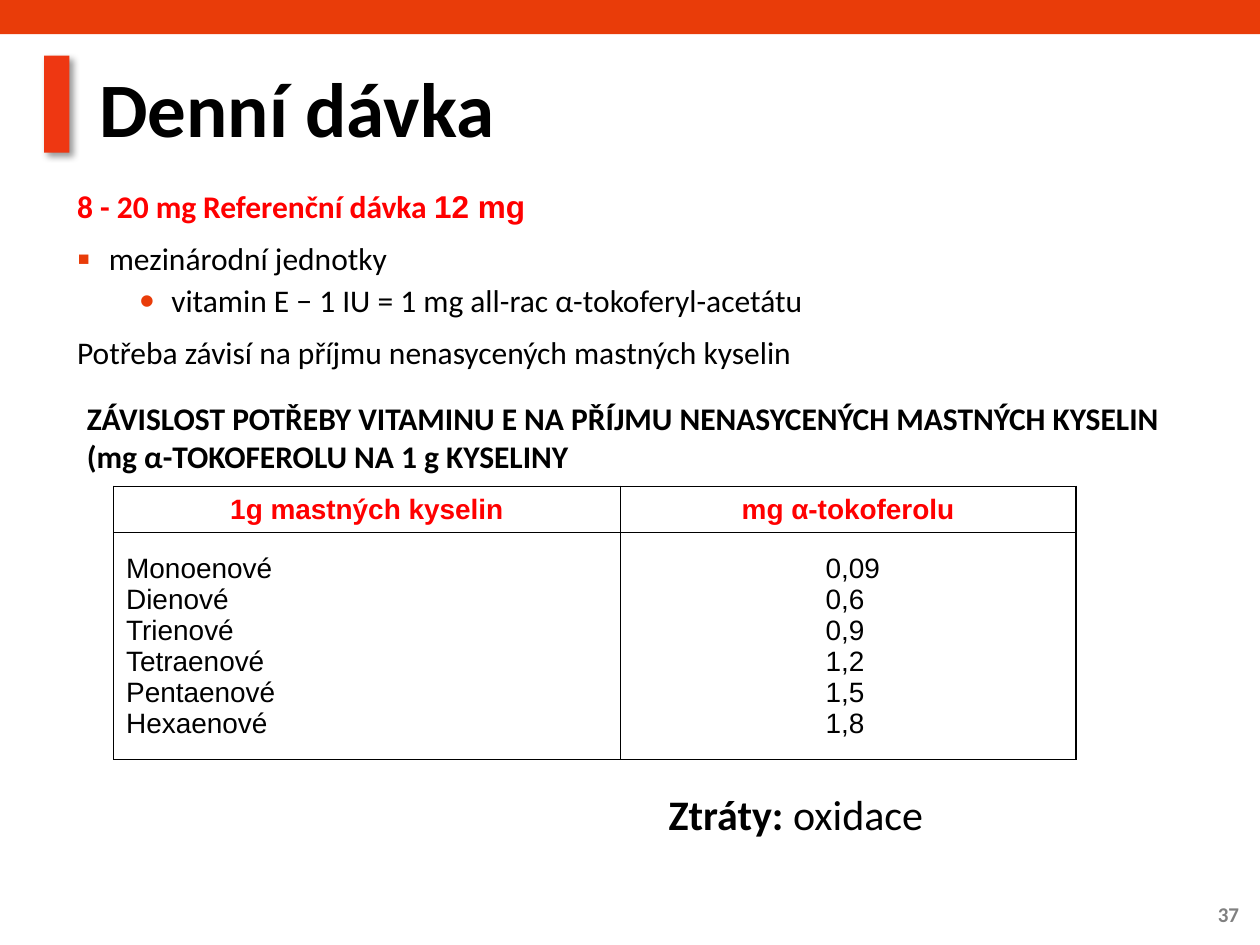
import pptx
import pptx.dml.color
import pptx.enum.shapes
import pptx.enum.text
import pptx.oxml.ns
import pptx.util
from lxml import etree

Cm = pptx.util.Cm
Pt = pptx.util.Pt
ALIGN = pptx.enum.text.PP_ALIGN
ANCHOR = pptx.enum.text.MSO_ANCHOR
AUTO_SIZE = pptx.enum.text.MSO_AUTO_SIZE

ACCENT, BAR, RED, BLACK, GREY = "E93C09", "EE3712", "FF0000", "000000", "808080"

TITLE = "Denní dávka"
SQUARE = {"char": "▪", "size": 120000}
DOT = {"char": "•", "size": 134000}
BODY_FORMAT = {"name": "Calibri", "size": Pt(18), "bold": False, "color": BLACK}
DOSE_FORMAT = {**BODY_FORMAT, "bold": True, "color": RED}
BODY = [
    {"runs": [("8 - 20 mg\tReferenční dávka ", DOSE_FORMAT),
              ("12 mg", {**DOSE_FORMAT, "name": "Arial"})],
     "before": 0, "tab": 3.26},
    {"runs": [("mezinárodní jednotky", BODY_FORMAT)],
     "before": 10, "left": 0.64, "bullet": SQUARE},
    {"runs": [("vitamin E − 1 IU = 1 mg all-rac α-tokoferyl-acetátu", BODY_FORMAT)],
     "before": 5, "left": 1.9, "bullet": DOT, "level": 1},
    {"runs": [("Potřeba závisí na příjmu nenasycených mastných kyselin", BODY_FORMAT)],
     "before": 10},
]
TABLE_HEADING = ("ZÁVISLOST POTŘEBY VITAMINU E NA PŘÍJMU NENASYCENÝCH MASTNÝCH KYSELIN "
                 "(mg α-TOKOFEROLU NA 1 g KYSELINY")
HEADERS = ["1g mastných kyselin", "mg α-tokoferolu"]
DOSES = [
    ("Monoenové", "0,09"),
    ("Dienové", "0,6"),
    ("Trienové", "0,9"),
    ("Tetraenové", "1,2"),
    ("Pentaenové", "1,5"),
    ("Hexaenové", "1,8"),
]
COLUMN_WIDTHS = [10.21, 9.19]
COLUMN_INDENTS = [0, 3.89]
ROW_HEIGHTS = [0.94, 4.57]
LOSSES = [("Ztráty: ", True), ("oxidace", False)]
SLIDE_NUMBER = "37"


def rgb(value):
    return pptx.dml.color.RGBColor.from_string(value)


def child(parent, tag, **attributes):
    return etree.SubElement(parent, pptx.oxml.ns.qn(tag), attributes)


def add_run(paragraph, text, values):
    run = paragraph.add_run()
    run.text = text
    for name, value in values.items():
        if name == "color":
            run.font.color.rgb = rgb(value)
        else:
            setattr(run.font, name, value)


def place(shape, left, top, width, height):
    box = {"left": left, "top": top, "width": width, "height": height}
    for name, value in box.items():
        setattr(shape, name, Cm(value))


def add_bar(slide, box, color):
    shape = slide.shapes.add_shape(
        pptx.enum.shapes.MSO_SHAPE.RECTANGLE, *[Cm(value) for value in box])
    shape.fill.solid()
    shape.fill.fore_color.rgb = rgb(color)
    shape.line.fill.background()
    shape.shadow.inherit = False
    return shape


def add_shadow(shape):
    effects = shape._element.spPr.find(pptx.oxml.ns.qn("a:effectLst"))
    shadow = child(effects, "a:outerShdw", blurRad=str(Pt(4)), dist=str(Pt(3)),
                   dir="2700000", algn="tl", rotWithShape="0")
    child(child(shadow, "a:srgbClr", val=BLACK), "a:alpha", val="40000")


def add_text(slide, box, runs, align=ALIGN.LEFT, anchor=ANCHOR.TOP,
             wrap=True, auto_size=AUTO_SIZE.SHAPE_TO_FIT_TEXT):
    frame = slide.shapes.add_textbox(*[Cm(value) for value in box]).text_frame
    settings = {"word_wrap": wrap, "auto_size": auto_size, "vertical_anchor": anchor}
    for name, value in settings.items():
        setattr(frame, name, value)
    paragraph = frame.paragraphs[0]
    paragraph.alignment = align
    for text, values in runs:
        add_run(paragraph, text, values)


def fill_title(title):
    place(title, 1.75, 1.02, 22.99, 2.49)
    title.text_frame.vertical_anchor = ANCHOR.MIDDLE
    title.text_frame.auto_size = AUTO_SIZE.NONE
    paragraph = title.text_frame.paragraphs[0]
    paragraph.alignment = ALIGN.LEFT
    paragraph.line_spacing = 0.9
    add_run(paragraph, TITLE,
            {"name": "Calibri", "size": Pt(44), "bold": True, "color": BLACK})


def fill_body(body):
    place(body, 1.3, 3.73, 22.86, 2.29)
    frame = body.text_frame
    frame.auto_size = AUTO_SIZE.NONE
    for index, item in enumerate(BODY):
        paragraph = frame.add_paragraph() if index else frame.paragraphs[0]
        paragraph.level = item.get("level", 0)
        properties = paragraph._p.get_or_add_pPr()
        bullet = item.get("bullet")
        properties.set("marL", str(Cm(item.get("left", 0))))
        properties.set("indent", str(-Cm(0.64) if bullet else 0))
        if bullet:
            child(child(properties, "a:buClr"), "a:srgbClr", val=ACCENT)
            child(properties, "a:buSzPct", val=str(bullet["size"]))
            child(properties, "a:buFont", typeface="Arial")
            child(properties, "a:buChar", char=bullet["char"])
        else:
            child(properties, "a:buNone")
        if "tab" in item:
            child(child(properties, "a:tabLst"), "a:tab",
                  pos=str(Cm(item["tab"])), algn="l")
        paragraph.line_spacing = 0.9
        paragraph.space_before = Pt(item["before"])
        for text, values in item["runs"]:
            add_run(paragraph, text, values)


def fill_cell(cell, lines, align, indent, values):
    cell.vertical_anchor = ANCHOR.MIDDLE
    cell.fill.background()
    properties = cell._tc.get_or_add_tcPr()
    for index, side in enumerate(["a:lnL", "a:lnR", "a:lnT", "a:lnB"]):
        border = child(properties, side, w=str(Pt(0.75)))
        child(child(border, "a:solidFill"), "a:srgbClr", val=BLACK)
        properties.insert(index, border)
    for index, line in enumerate(lines):
        frame = cell.text_frame
        paragraph = frame.add_paragraph() if index else frame.paragraphs[0]
        paragraph.alignment = align
        paragraph._p.get_or_add_pPr().set("marL", str(Cm(indent)))
        add_run(paragraph, line, {"name": "Arial", "size": Pt(16), **values})


def add_dose_table(slide):
    table = slide.shapes.add_table(
        2, 2, Cm(2.29), Cm(9.8), Cm(sum(COLUMN_WIDTHS)), Cm(sum(ROW_HEIGHTS))).table
    table.first_row = False
    table.horz_banding = False
    for row, height in zip(table.rows, ROW_HEIGHTS):
        row.height = Cm(height)
    for index, lines in enumerate(zip(*DOSES)):
        table.columns[index].width = Cm(COLUMN_WIDTHS[index])
        fill_cell(table.cell(0, index), [HEADERS[index]], ALIGN.CENTER, 0,
                  {"bold": True, "color": RED})
        fill_cell(table.cell(1, index), lines, ALIGN.LEFT, COLUMN_INDENTS[index],
                  {"bold": False, "color": BLACK})


def main():
    presentation = pptx.Presentation()
    presentation.slide_width = Cm(25.4)
    presentation.slide_height = Cm(19.05)
    slide = presentation.slides.add_slide(presentation.slide_layouts[1])
    add_bar(slide, (0, 0, 25.4, 0.69), ACCENT)
    add_shadow(add_bar(slide, (0.89, 1.12, 0.51, 1.96), BAR))
    fill_title(slide.shapes.title)
    fill_body(slide.placeholders[1])
    add_dose_table(slide)
    add_text(slide, (1.5, 7.92, 22.4, 1.78),
             [(TABLE_HEADING, {**BODY_FORMAT, "bold": True})])
    add_text(slide, (13.23, 15.77, 5.89, 1.27),
             [(text, {**BODY_FORMAT, "size": Pt(24), "bold": bold})
              for text, bold in LOSSES], wrap=False)
    add_text(slide, (23.5, 17.91, 1.73, 1.02),
             [(SLIDE_NUMBER, {"name": "Calibri", "size": Pt(12),
                              "bold": True, "color": GREY})],
             ALIGN.RIGHT, ANCHOR.MIDDLE, auto_size=AUTO_SIZE.NONE)
    presentation.save("out.pptx")


if __name__ == "__main__":
    main()
